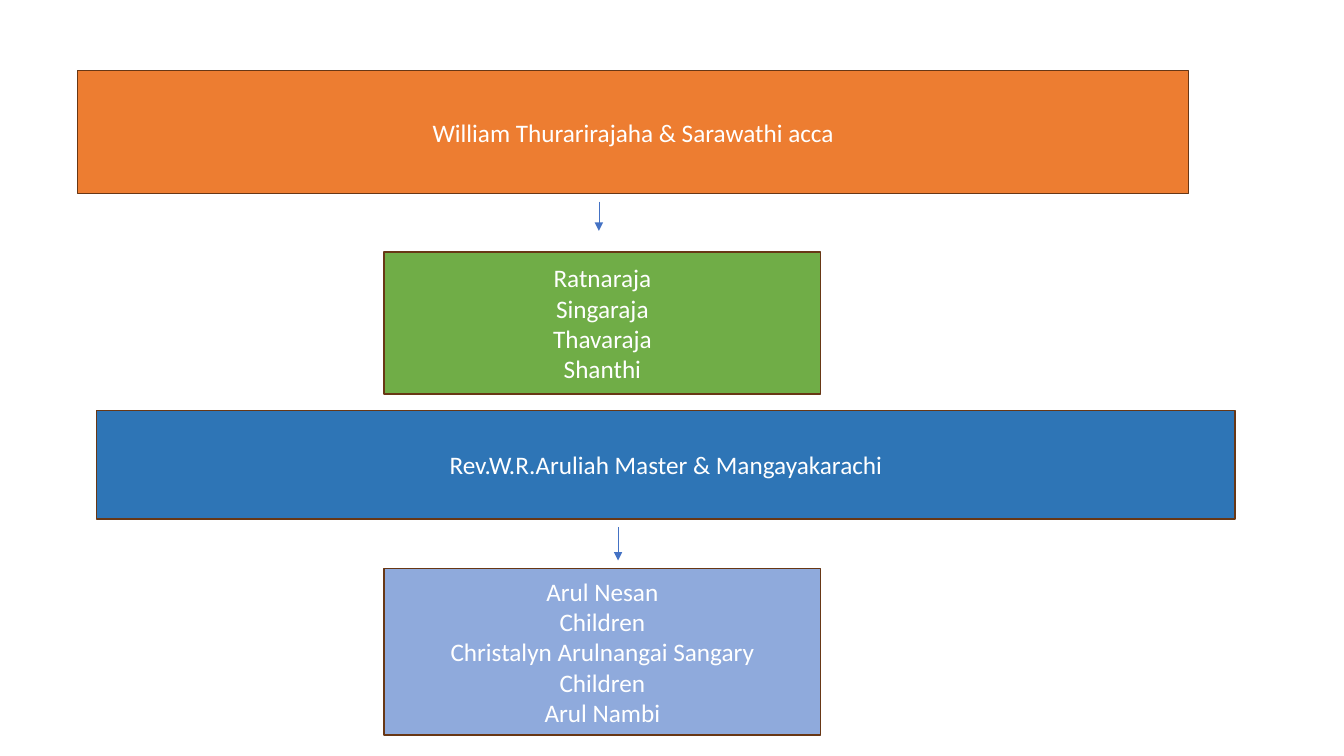
from lxml.etree import SubElement
from pptx import Presentation
from pptx.dml.color import RGBColor
from pptx.enum.shapes import MSO_CONNECTOR, MSO_SHAPE
from pptx.enum.text import MSO_ANCHOR, PP_ALIGN
from pptx.oxml.ns import qn
from pptx.util import Pt

PX = 9144  # EMU, 100 px to the inch
WHITE = RGBColor(0xFF, 0xFF, 0xFF)
ORANGE = RGBColor(0xED, 0x7D, 0x31)
GREEN = RGBColor(0x70, 0xAD, 0x47)
BLUE = RGBColor(0x2E, 0x75, 0xB6)
PALE = RGBColor(0x8F, 0xAA, 0xDC)
BROWN = RGBColor(0x68, 0x37, 0x15)
ARROW = RGBColor(0x44, 0x72, 0xC4)

KIDS_X, KIDS_W = 381, 433


def write(frame, text, font="Calibri", size=18, color=WHITE, align=PP_ALIGN.CENTER):
    """Fill the frame with one paragraph for each line of text."""
    frame.word_wrap = True
    frame.vertical_anchor = MSO_ANCHOR.MIDDLE
    frame.text = text
    for para in frame.paragraphs:
        para.alignment = align
        for run in para.runs:
            run.font.name = font
            run.font.size = Pt(size)
            run.font.color.rgb = color


class Tree:
    """Draws the boxes and arrows of a family tree on one slide."""

    def __init__(self, slide, edge=BROWN, arrow=ARROW):
        self.slide = slide
        self.edge = edge
        self.tint = arrow

    def box(self, x, y, w, h, fill, text):
        shape = self.slide.shapes.add_shape(
            MSO_SHAPE.RECTANGLE, x * PX, y * PX, w * PX, h * PX)
        shape.shadow.inherit = False
        shape.fill.solid()
        shape.fill.fore_color.rgb = fill
        shape.line.color.rgb = self.edge
        shape.line.width = Pt(1)
        write(shape.text_frame, text)

    def arrow(self, x, top, end):
        """Draw an arrow straight down from top to end."""
        link = self.slide.shapes.add_connector(
            MSO_CONNECTOR.STRAIGHT, x * PX, top * PX, x * PX, end * PX)
        link.line.color.rgb = self.tint
        link.line.width = Pt(0.5)
        SubElement(link.line._get_or_add_ln(), qn("a:tailEnd"), type="triangle")
        SubElement(link._element.spPr, qn("a:effectLst"))


def main():
    deck = Presentation()
    deck.slide_width, deck.slide_height = 1333 * PX, 750 * PX
    tree = Tree(deck.slides.add_slide(deck.slide_layouts[6]))

    tree.box(77, 70, 1102, 122, ORANGE, "William Thurarirajaha & Sarawathi acca")
    tree.box(KIDS_X, 250, KIDS_W, 141, GREEN,
             "Ratnaraja\nSingaraja\nThavaraja\nShanthi")
    tree.box(96, 407, 1129, 108, BLUE, "Rev.W.R.Aruliah Master & Mangayakarachi")
    tree.box(KIDS_X, 564, KIDS_W, 165, PALE,
             "Arul Nesan\nChildren\nChristalyn Arulnangai Sangary\nChildren\nArul Nambi")

    tree.arrow(594, 200, 229)
    tree.arrow(613, 523, 556)

    deck.save("out.pptx")


if __name__ == "__main__":
    main()
